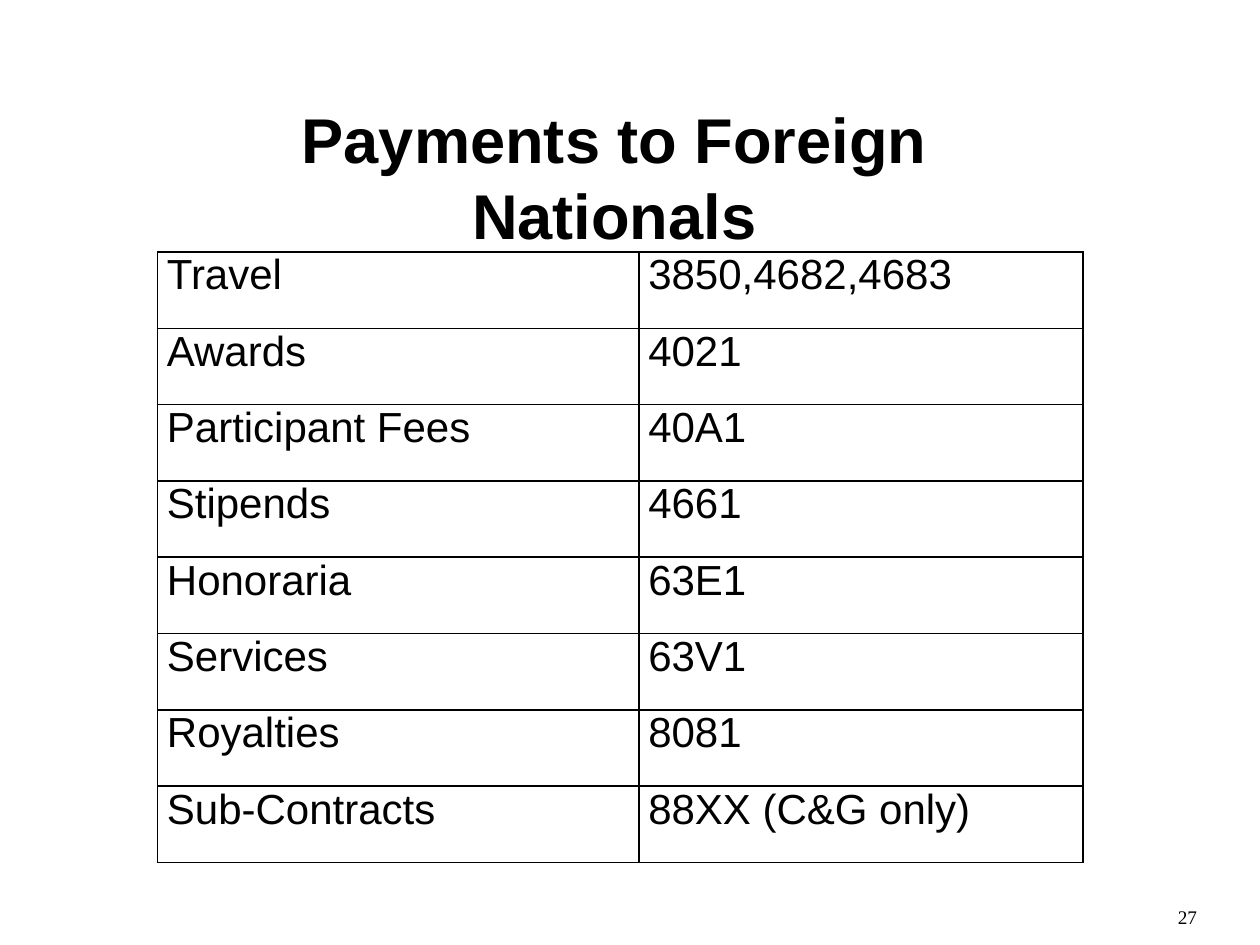
from dataclasses import dataclass

from lxml.etree import SubElement
from pptx import Presentation
from pptx.dml.color import RGBColor as RGB
from pptx.enum.text import MSO_ANCHOR as Anchor, MSO_AUTO_SIZE as Auto, PP_ALIGN as Align
from pptx.oxml.ns import qn
from pptx.util import Pt


@dataclass(frozen=True)
class Theme:
    ink: RGB = RGB(0, 0, 0)
    sans: str = "Arial"
    serif: str = "Times New Roman"
    head: float = 36.1
    body: float = 24
    foot: float = 11
    rule: float = 1


THEME = Theme()

CODES = [
    ("Travel", "3850,4682,4683"),
    ("Awards", "4021"),
    ("Participant Fees", "40A1"),
    ("Stipends", "4661"),
    ("Honoraria", "63E1"),
    ("Services", "63V1"),
    ("Royalties", "8081"),
    ("Sub-Contracts", "88XX (C&G only)"),
]


def assign(item, values):
    for name, value in values.items():
        setattr(item, name, value)


def write(frame, text, size, face, align, bold=False):
    frame.text = text
    para = frame.paragraphs[0]
    para.alignment = align
    font = para.runs[0].font
    assign(font, dict(size=Pt(size), name=face, bold=bold))
    font.color.rgb = THEME.ink


def frame_cell(cell):
    """Draw a thin line on each side of a table cell."""
    props = cell._tc.get_or_add_tcPr()
    for place, side in enumerate(("lnL", "lnR", "lnT", "lnB")):
        line = SubElement(props, qn(f"a:{side}"), w=str(Pt(THEME.rule)))
        fill = SubElement(line, qn("a:solidFill"))
        SubElement(fill, qn("a:srgbClr"), val=str(THEME.ink))
        # Borders must come before the cell fill
        props.remove(line)
        props.insert(place, line)


def add_title(slide, box, text):
    title = slide.shapes.title
    assign(title, dict(zip(("left", "top", "width", "height"), map(Pt, box))))
    frame = title.text_frame
    assign(frame, dict(word_wrap=True, auto_size=Auto.NONE,
                       vertical_anchor=Anchor.TOP,
                       margin_top=Pt(3.6), margin_bottom=0,
                       margin_left=Pt(7.2), margin_right=Pt(7.2)))
    write(frame, text, THEME.head, THEME.sans, Align.CENTER, True)


def add_codes(slide, box, rows, share):
    left, top, width, height = box
    table = slide.shapes.add_table(len(rows), 2, *map(Pt, box)).table
    assign(table, dict(first_row=False, horz_banding=False))
    for col, part in zip(table.columns, (share, 1 - share)):
        col.width = Pt(width * part)
    for row, texts in zip(table.rows, rows):
        row.height = Pt(height / len(rows))
        for cell, text in zip(row.cells, texts):
            assign(cell, dict(margin_left=Pt(5.4), margin_right=Pt(5.4),
                              margin_top=0, margin_bottom=0))
            cell.fill.background()
            frame_cell(cell)
            write(cell.text_frame, text, THEME.body, THEME.sans, Align.LEFT)


def add_number(slide, box, text):
    frame = slide.shapes.add_textbox(*map(Pt, box)).text_frame
    assign(frame, dict(word_wrap=True, vertical_anchor=Anchor.MIDDLE, margin_right=0))
    write(frame, text, THEME.foot, THEME.serif, Align.RIGHT)


def main():
    deck = Presentation()
    assign(deck, dict(slide_width=Pt(720), slide_height=Pt(540)))
    slide = deck.slides.add_slide(deck.slide_layouts[5])  # title only
    add_codes(slide, (90, 144, 529, 349), CODES, 0.52)
    add_number(slide, (636, 515, 48, 18), "27")
    add_title(slide, (162, 54, 378, 84), "Payments to Foreign Nationals")
    deck.save("out.pptx")


if __name__ == "__main__":
    main()
